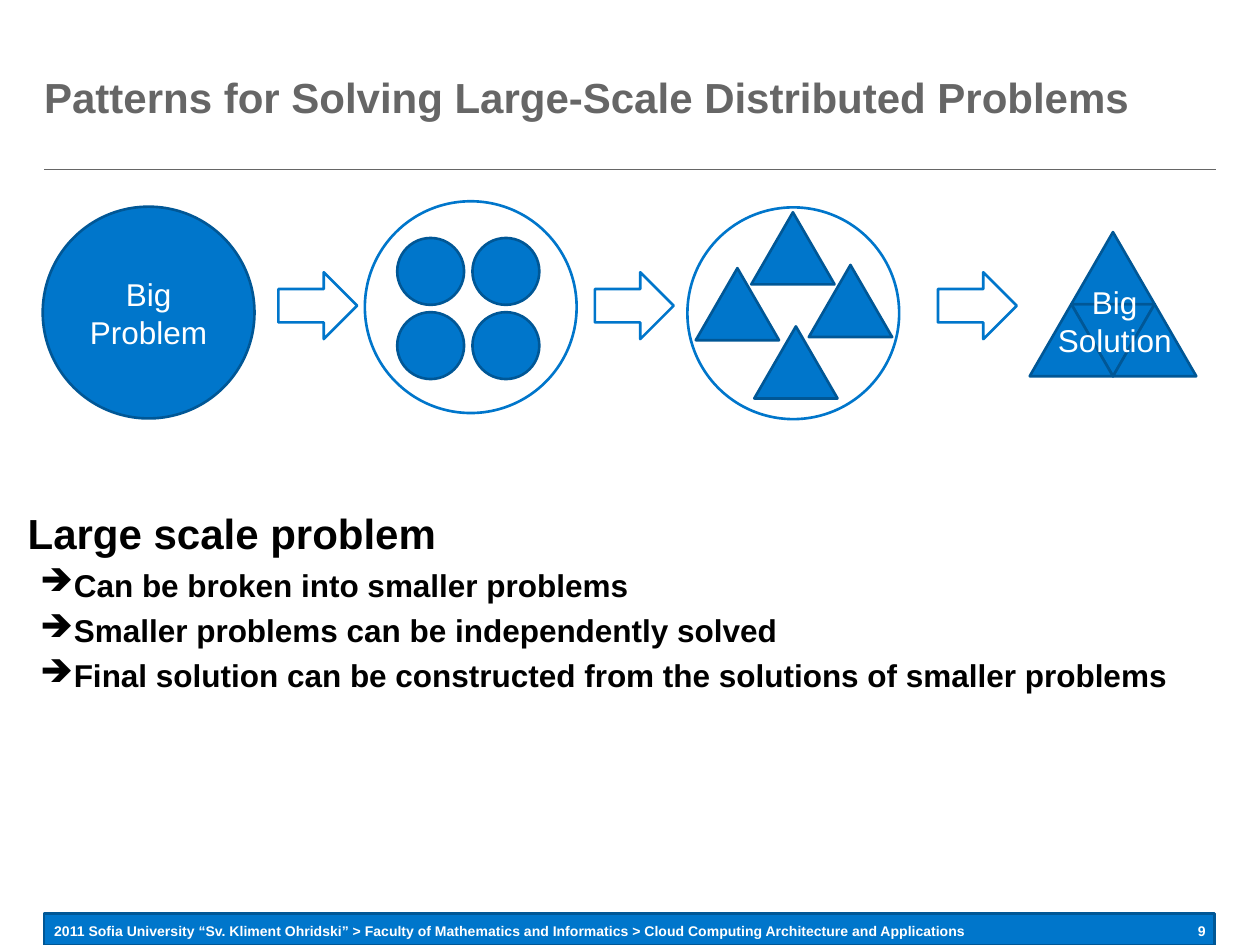
import pptx
import pptx.dml.color
import pptx.enum.shapes
import pptx.enum.text
import pptx.oxml.ns
import pptx.util
from lxml import etree

Pt = pptx.util.Pt
SHAPES = pptx.enum.shapes.MSO_SHAPE
ALIGN = pptx.enum.text.PP_ALIGN
ANCHOR = pptx.enum.text.MSO_ANCHOR
COLORS = {"blue": "0076CB", "navy": "005796", "gray": "666666",
          "white": "FFFFFF", "black": "000000"}
SOLID = {"fill": "blue", "line": "navy"}
OUTLINE = {"fill": "white", "line": "blue"}
FOOTER_FONT = {"size": Pt(8), "bold": True}
LABEL_FONT = {"size": Pt(18), "bold": False}
HEADING_FONT = {"size": Pt(24), "bold": True}
BULLET_FONT = {"size": Pt(18), "bold": True}
BIG = 121
SMALL = 38.2
TRIANGLE = (47.6, 41.2)


def color(name):
    return pptx.dml.color.RGBColor.from_string(COLORS[name])


def set_all(target, values):
    for name, value in values.items():
        setattr(target, name, value)


def add_shape(parent, kind, left, top, width, height, style, rotation=0):
    shape = parent.shapes.add_shape(kind, Pt(left), Pt(top), Pt(width), Pt(height))
    shape.shadow.inherit = False
    shape.rotation = rotation
    shape.fill.solid()
    shape.fill.fore_color.rgb = color(style["fill"])
    shape.line.color.rgb = color(style["line"])
    shape.line.width = Pt(1.5)
    return shape


def add_rule(slide, left, right, top):
    connector = slide.shapes.add_connector(
        pptx.enum.shapes.MSO_CONNECTOR.STRAIGHT, Pt(left), Pt(top), Pt(right), Pt(top))
    connector.line.color.rgb = color("gray")
    connector.line.width = Pt(0.5)
    properties = connector._element.spPr
    etree.SubElement(properties, pptx.oxml.ns.qn("a:effectLst"))


def write_paragraph(paragraph, text, font, font_color, **layout):
    paragraph.text = text
    set_all(paragraph, layout)
    for run in paragraph.runs:
        set_all(run.font, {"name": "Arial", **font})
        run.font.color.rgb = color(font_color)


def prepare_frame(shape, anchor):
    frame = shape.text_frame
    set_all(frame, {"word_wrap": True, "vertical_anchor": anchor, "margin_left": 0,
                    "margin_right": 0, "margin_top": 0, "margin_bottom": 0})
    return frame


def add_text(slide, box, text, font, font_color, anchor=ANCHOR.TOP, alignment=ALIGN.LEFT):
    shape = slide.shapes.add_textbox(*map(Pt, box))
    frame = prepare_frame(shape, anchor)
    write_paragraph(frame.paragraphs[0], text, font, font_color, alignment=alignment)
    return frame


def add_bullet(frame, text):
    paragraph = frame.add_paragraph()
    write_paragraph(paragraph, text, BULLET_FONT, "black", level=1, space_before=Pt(4.2))
    properties = paragraph._p.get_or_add_pPr()
    properties.set("marL", str(Pt(21.6)))
    properties.set("indent", str(Pt(-14.4)))
    bullet = etree.SubElement(properties, pptx.oxml.ns.qn("a:buChar"))
    bullet.set("char", "➔")


def add_problem(slide):
    circle = add_shape(slide, SHAPES.OVAL, 24.4, 118.1, BIG, BIG, SOLID)
    frame = prepare_frame(circle, ANCHOR.MIDDLE)
    set_all(frame, {"margin_left": Pt(7.2), "margin_right": Pt(7.2)})
    write_paragraph(frame.paragraphs[0], "Big Problem", LABEL_FONT, "white",
                    alignment=ALIGN.CENTER)


def add_small_problems(slide):
    group = slide.shapes.add_group_shape()
    add_shape(group, SHAPES.OVAL, 208.5, 115, BIG, BIG, OUTLINE)
    for row in range(2):
        for column in range(2):
            add_shape(group, SHAPES.OVAL, 227 + column * 43, 136 + row * 42.4,
                      SMALL, SMALL, SOLID)


def add_small_solutions(slide):
    group = slide.shapes.add_group_shape()
    add_shape(group, SHAPES.OVAL, 392.8, 118.5, BIG, BIG, OUTLINE)
    for left, top in ((462.2, 151.4), (429.3, 121.3), (397.6, 153.2), (431, 186.5)):
        add_shape(group, SHAPES.ISOSCELES_TRIANGLE, left, top, *TRIANGLE, SOLID)


def add_solution(slide):
    group = slide.shapes.add_group_shape()
    width, height = TRIANGLE
    left, top = 612.2, 132.6
    for column, row, rotation in ((0, 1, 180), (0, 0, 0), (-0.5, 1, 0), (0.5, 1, 0)):
        add_shape(group, SHAPES.ISOSCELES_TRIANGLE, left + column * width,
                  top + row * height, width, height, SOLID, rotation)


def add_footer(slide):
    add_shape(slide, SHAPES.RECTANGLE, 25.2, 522, 669, 18, SOLID)
    add_text(slide, (31, 527, 560, 9.4),
             "2011 Sofia University “Sv. Kliment Ohridski” > Faculty of Mathematics and "
             "Informatics > Cloud Computing Architecture and Applications",
             FOOTER_FONT, "white")
    add_text(slide, (669, 527, 20, 9.4), "9", FOOTER_FONT, "white", alignment=ALIGN.RIGHT)


def main():
    presentation = pptx.Presentation()
    set_all(presentation, {"slide_width": Pt(720), "slide_height": Pt(540)})
    slide = presentation.slides.add_slide(presentation.slide_layouts[6])
    add_rule(slide, 25.2, 694.8, 97)
    add_footer(slide)
    add_text(slide, (25.2, 25.2, 669, 60),
             "Patterns for Solving Large-Scale Distributed Problems",
             HEADING_FONT, "gray", ANCHOR.MIDDLE)
    body = add_text(slide, (15.8, 290.2, 669, 115), "Large scale problem",
                    HEADING_FONT, "black")
    for text in ("Can be broken into smaller problems",
                 "Smaller problems can be independently solved",
                 "Final solution can be constructed from the solutions of smaller problems"):
        add_bullet(body, text)
    add_problem(slide)
    add_small_problems(slide)
    add_small_solutions(slide)
    add_solution(slide)
    for left in (159.1, 340, 536):
        add_shape(slide, SHAPES.RIGHT_ARROW, left, 155.6, 45, 38.2, OUTLINE)
    add_text(slide, (597, 157.7, 80, 51), "Big\vSolution", LABEL_FONT, "white",
             ANCHOR.MIDDLE, ALIGN.CENTER)
    presentation.save("out.pptx")


if __name__ == "__main__":
    main()
